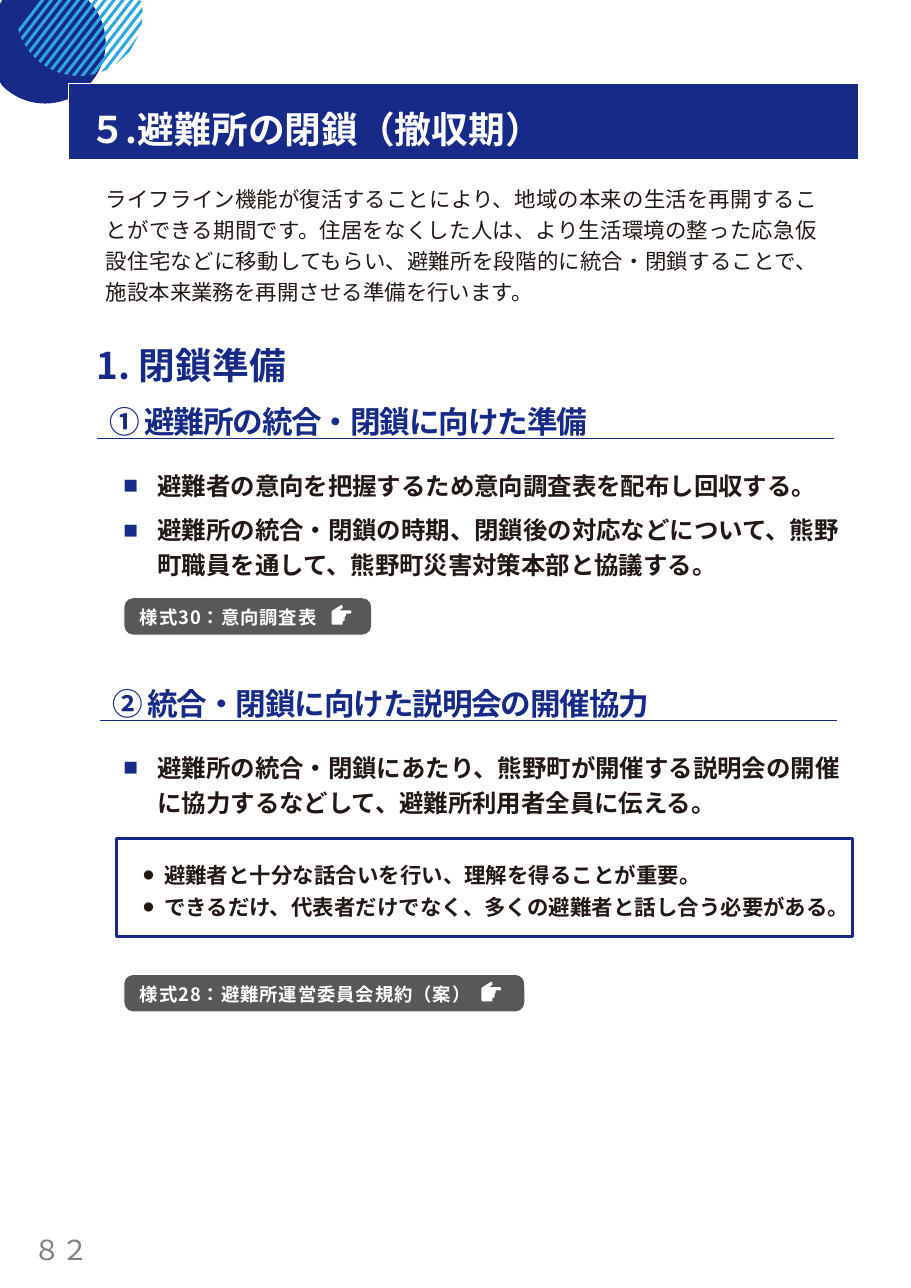
import math

import pptx
import pptx.dml.color
import pptx.enum.lang
import pptx.enum.shapes
import pptx.enum.text
import pptx.oxml
import pptx.oxml.ns
import pptx.util

Inches = pptx.util.Inches
Pt = pptx.util.Pt
RGB = pptx.dml.color.RGBColor.from_string
ALIGN = pptx.enum.text.PP_ALIGN
SHAPE = pptx.enum.shapes.MSO_SHAPE
qn = pptx.oxml.ns.qn

COLORS = {"navy": "172A88", "sky": "2EA7E0", "ink": "221815",
          "badge": "595857", "white": "FFFFFF", "page": "808080"}
GOTHIC = "Noto Sans CJK JP"

deck = pptx.Presentation()
deck.slide_width, deck.slide_height = Inches(8.27), Inches(11.69)
slide = deck.slides.add_slide(deck.slide_layouts[5])
shapes = slide.shapes


def write(area, *paragraphs, size, color="ink", bold=True, font=GOTHIC, pitch=None,
          after=0, align=ALIGN.LEFT, spacing=0, bullet=None, bullet_color="ink",
          indent=0, hang=0, insets=(0, 0)):
    """Fill a text box or placeholder; pitch is the line height in points."""
    frame = area.text_frame
    frame.word_wrap = True
    frame.auto_size = pptx.enum.text.MSO_AUTO_SIZE.NONE
    frame.vertical_anchor = pptx.enum.text.MSO_ANCHOR.TOP
    frame.margin_left, frame.margin_top = map(Inches, insets)
    frame.margin_right = frame.margin_bottom = 0
    for number, words in enumerate(paragraphs):
        paragraph = frame.add_paragraph() if number else frame.paragraphs[0]
        paragraph.alignment = align
        paragraph.line_spacing = Pt(pitch or size * 1.2)
        paragraph.space_before, paragraph.space_after = Pt(0), Pt(after)
        props = paragraph._p.get_or_add_pPr()
        props.set("marL", str(Inches(indent)))
        props.set("indent", str(Inches(-hang)))
        if bullet:
            tint = props.makeelement(qn("a:buClr"), {})
            tint.append(tint.makeelement(qn("a:srgbClr"), {"val": COLORS[bullet_color]}))
            props.append(tint)
            props.append(props.makeelement(qn("a:buFont"), {"typeface": "Arial"}))
            props.append(props.makeelement(qn("a:buChar"), {"char": bullet}))
        run = paragraph.add_run()
        run.text = words
        run.font.size, run.font.bold, run.font.name = Pt(size), bold, font
        run.font.color.rgb = RGB(COLORS[color])
        run.font.language_id = pptx.enum.lang.MSO_LANGUAGE_ID.JAPANESE
        letters = run._r.get_or_add_rPr()
        letters.set("spc", str(round(spacing * 100)))
        latin = letters.find(qn("a:latin"))
        latin.addnext(letters.makeelement(qn("a:ea"), {"typeface": font}))


def outline(contours, color):
    """Draw closed contours, given in inches, as one filled shape."""
    contours = [[(Inches(x), Inches(y)) for x, y in contour] for contour in contours]
    builder = shapes.build_freeform(*contours[0][0])
    for number, contour in enumerate(contours):
        if number:
            builder.move_to(*contour[0])
        builder.add_line_segments(contour[1:], close=True)
    drawn = builder.convert_to_shape()
    drawn.shadow.inherit = False
    drawn.fill.solid()
    drawn.fill.fore_color.rgb = RGB(COLORS[color])
    drawn.line.fill.background()


# Corner ornament: a disc and a striped disc, both cut at the page edges
angles = [math.radians(5 * step) for step in range(72)]
outline([[(max(0, 0.41 + 0.55 * math.cos(a)), max(0, 0.39 + 0.55 * math.sin(a)))
          for a in angles]], "navy")

stripe_x, stripe_y, radius, slant = 0.72, 0.115, 0.575, 0.77
stripes = []
for number in range(15):
    ends = []
    for offset in (0.37, 0.405):
        # Chord of the disc along x + slant * y = reach
        reach = offset + 0.081 * number
        gap = reach - stripe_x
        a, b = 1 + slant ** 2, slant * gap + stripe_y
        root = math.sqrt(max(0, b ** 2 - a * (gap ** 2 + stripe_y ** 2 - radius ** 2)))
        ends.append([(reach - slant * y, y) for y in (max(0, (b - root) / a), (b + root) / a)])
    left, right = ends
    stripes.append([left[0], left[1], right[1], right[0]])
outline(stripes, "sky")

# Banner title, placed in front of the ornament
title = shapes.title
shapes._spTree.append(title._element)
title.left, title.top, title.width, title.height = map(Inches, (0.62, 0.76, 7.17, 0.69))
title.fill.solid()
title.fill.fore_color.rgb = RGB(COLORS["navy"])
title.line.color.rgb = RGB(COLORS["white"])
title.line.width = Pt(0.75)
write(title, "５.避難所の閉鎖（撤収期）", size=24, color="white", insets=(0.19, 0.21))

write(shapes.add_textbox(Inches(0.96), Inches(1.64), Inches(6.46), Inches(1.14)),
      "ライフライン機能が復活することにより、地域の本来の生活を再開することができる期間です。"
      "住居をなくした人は、より生活環境の整った応急仮設住宅などに移動してもらい、"
      "避難所を段階的に統合・閉鎖することで、施設本来業務を再開させる準備を行います。",
      size=14, bold=False, pitch=20.2, align=ALIGN.JUSTIFY)
write(shapes.add_textbox(Inches(0.88), Inches(3.11), Inches(4.45), Inches(0.42)),
      "1. 閉鎖準備", size=24, color="navy")

# Steps: underlined heading and its actions
steps = [
    (0.88, 3.98, "① 避難所の統合・閉鎖に向けた準備",
     ["避難者の意向を把握するため意向調査表を配布し回収する。",
      "避難所の統合・閉鎖の時期、閉鎖後の対応などについて、熊野町職員を通して、"
      "熊野町災害対策本部と協議する。"]),
    (0.91, 6.54, "② 統合・閉鎖に向けた説明会の開催協力",
     ["避難所の統合・閉鎖にあたり、熊野町が開催する説明会の開催に協力するなどして、"
      "避難所利用者全員に伝える。"]),
]
for left, rule_y, heading, actions in steps:
    rule = shapes.add_connector(pptx.enum.shapes.MSO_CONNECTOR.STRAIGHT, Inches(left),
                                Inches(rule_y), Inches(left + 6.69), Inches(rule_y))
    rule.line.color.rgb = RGB(COLORS["navy"])
    rule.line.width = Pt(1.04)
    rule._element.spPr.append(rule._element.makeelement(qn("a:effectLst"), {}))
    write(shapes.add_textbox(Inches(left + 0.11), Inches(rule_y - 0.32),
                             Inches(5.3), Inches(0.35)),
          heading, size=20, color="navy", spacing=-0.8)
    write(shapes.add_textbox(Inches(1.1), Inches(rule_y + 0.24), Inches(6.69),
                             Inches(0.64 if len(actions) == 1 else 1.04)),
          *actions, size=16, pitch=23, after=6, bullet="■", bullet_color="navy",
          indent=0.33, hang=0.31)

# Framed advice
advice = shapes.add_shape(SHAPE.RECTANGLE, Inches(1.06), Inches(7.61), Inches(6.68), Inches(0.89))
advice.shadow.inherit = False
advice.fill.background()
advice.line.color.rgb = RGB(COLORS["navy"])
advice.line.width = Pt(2)
write(shapes.add_textbox(Inches(1.29), Inches(7.82), Inches(6.44), Inches(0.54)),
      "避難者と十分な話合いを行い、理解を得ることが重要。",
      "できるだけ、代表者だけでなく、多くの避難者と話し合う必要がある。",
      size=14, pitch=16.9, after=4, bullet="●", indent=0.2, hang=0.2)

# Form badges with a pointing hand
hand = [(0.09, 0), (0.01, 0.05), (0, 0.06), (0, 0.17), (0.01, 0.18), (0.1, 0.18),
        (0.1, 0.15), (0.12, 0.14), (0.12, 0.11), (0.13, 0.1), (0.13, 0.08),
        (0.17, 0.08), (0.18, 0.07), (0.18, 0.06), (0.17, 0.05), (0.08, 0.05),
        (0.08, 0.04), (0.1, 0.03), (0.1, 0.01)]
for top, width, hand_x, form in [(5.43, 2.24, 3.01, "様式30：意向調査表"),
                                 (8.85, 3.63, 4.37, "様式28：避難所運営委員会規約（案）")]:
    badge = shapes.add_shape(SHAPE.ROUNDED_RECTANGLE, Inches(1.13), Inches(top),
                             Inches(width), Inches(0.33))
    badge.adjustments[0] = 0.24
    badge.shadow.inherit = False
    badge.fill.solid()
    badge.fill.fore_color.rgb = RGB(COLORS["badge"])
    badge.line.fill.background()
    write(shapes.add_textbox(Inches(1.27), Inches(top + 0.07), Inches(3.41), Inches(0.2)),
          form, size=12, color="white", spacing=0.6)
    outline([[(hand_x + x, top + 0.06 + y) for x, y in hand]], "white")

write(shapes.add_textbox(Inches(0.15), Inches(11.19), Inches(0.81), Inches(0.33)),
      "８２", size=18, color="page", bold=False, font="Arial", align=ALIGN.CENTER)

deck.save("out.pptx")
